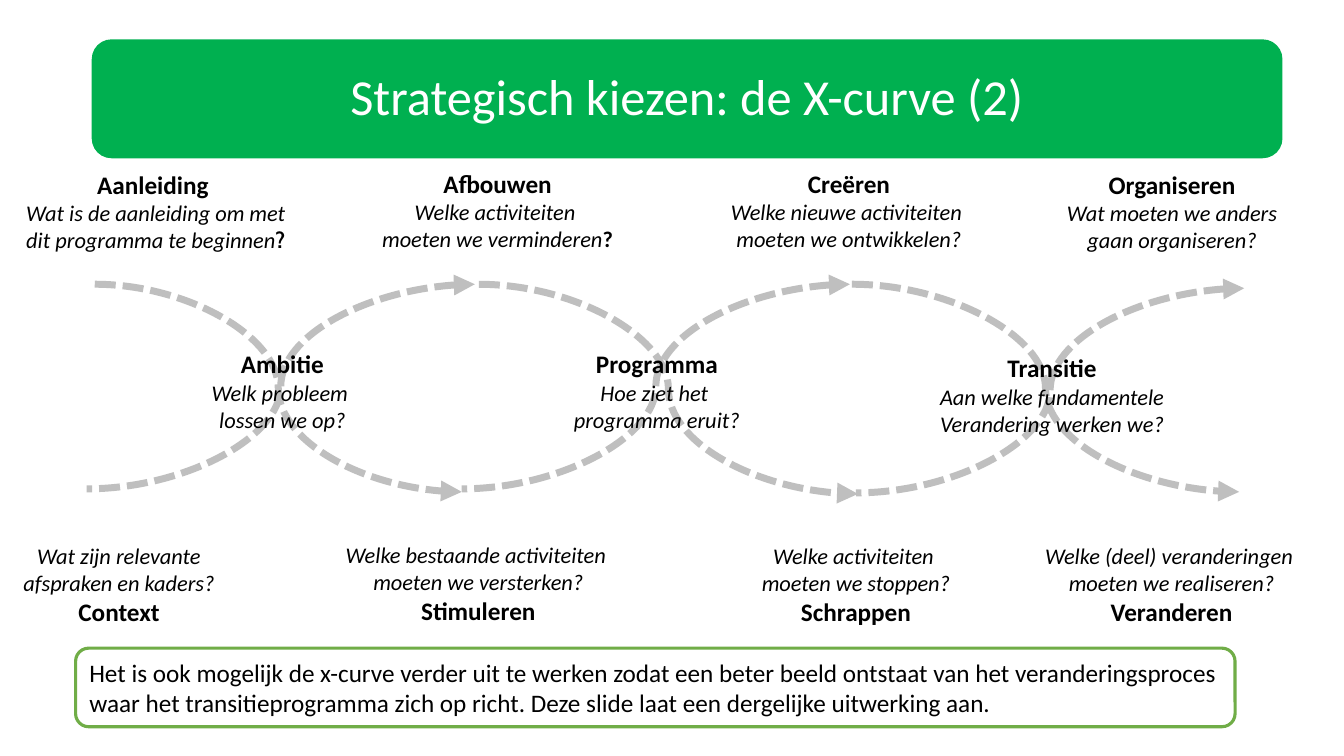
import pptx
import pptx.dml.color
import pptx.enum.dml
import pptx.enum.shapes
import pptx.enum.text
import pptx.oxml
import pptx.oxml.ns
import pptx.util

Inches = pptx.util.Inches
Pt = pptx.util.Pt
ALIGN = pptx.enum.text.PP_ALIGN
ANCHOR = pptx.enum.text.MSO_ANCHOR
FIT = pptx.enum.text.MSO_AUTO_SIZE

CURVES = [
    (12.34, 2.86, 8.49, 4.89),
    (4.71, 2.82, 0.86, 4.85),
    (0.94, 2.82, 4.58, 4.88),
    (4.75, 2.82, 8.51, 4.9),
    (8.43, 2.82, 4.58, 4.85),
    (8.45, 2.82, 12.29, 4.88),
]

HEADING_ABOVE = [
    (0.12, 1.63, 2.85, "Aanleiding ", "Wat is de aanleiding om met", "dit programma te beginnen", "Cabin"),
    (3.63, 1.62, 2.61, "Afbouwen", "Welke activiteiten ", "moeten we verminderen", "Calibri"),
    (7.09, 1.62, 2.66, "Creëren", "Welke nieuwe activiteiten ", "moeten we ontwikkelen?", None),
    (10.44, 1.63, 2.37, "Organiseren", "Wat moeten we anders", "gaan organiseren?", None),
    (1.99, 3.41, 1.62, "Ambitie", "Welk probleem ", "lossen we op?", None),
    (5.58, 3.41, 1.87, "Programma", "Hoe ziet het ", "programma eruit?", None),
    (9.22, 3.45, 2.43, "Transitie", "Aan welke fundamentele", "Verandering werken we?", None),
]

HEADING_BELOW = [
    (0.12, 5.33, 2.12, "Context", "Wat zijn relevante", "afspraken en kaders?"),
    (3.31, 5.32, 2.87, "Stimuleren", "Welke bestaande activiteiten ", "moeten we versterken?"),
    (7.44, 5.33, 2.1, "Schrappen", "Welke activiteiten ", "moeten we stoppen?"),
    (10.25, 5.33, 2.74, "Veranderen", "Welke (deel) veranderingen ", "moeten we realiseren?"),
]


def rgb(value):
    return pptx.dml.color.RGBColor.from_string(value)


def add_run(p, text, size=16, color="000000", bold=False, italic=False, font="Calibri"):
    r = p.add_run()
    r.text = text
    r.font.name = font
    r.font.size = Pt(size)
    r.font.bold = bold
    r.font.italic = italic
    r.font.color.rgb = rgb(color)


def add_curve(s, x1, y1, x2, y2):
    kind = pptx.enum.shapes.MSO_CONNECTOR.CURVE
    c = s.shapes.add_connector(kind, Inches(x1), Inches(y1), Inches(x2), Inches(y2))
    c.line.color.rgb = rgb("BFBFBF")
    c.line.width = Pt(5)
    c.line.dash_style = pptx.enum.dml.MSO_LINE.SQUARE_DOT
    arrow = "a:tailEnd" if x2 > x1 else "a:headEnd"
    end = pptx.oxml.parse_xml(f'<{arrow} {pptx.oxml.ns.nsdecls("a")} type="triangle"/>')
    c.line._get_or_add_ln().append(end)
    effects = pptx.oxml.parse_xml(f'<a:effectLst {pptx.oxml.ns.nsdecls("a")}/>')
    c._element.spPr.append(effects)


def add_question(s, x, y, w, heading, first, second, mark_font=None, below=False):
    tf = s.shapes.add_textbox(Inches(x), Inches(y), Inches(w), Inches(0.94)).text_frame
    tf.word_wrap = False
    tf.auto_size = FIT.SHAPE_TO_FIT_TEXT
    lines = [first, second, heading] if below else [heading, first, second]
    for i, text in enumerate(lines):
        p = tf.add_paragraph() if i else tf.paragraphs[0]
        p.alignment = ALIGN.CENTER
        if text == heading:
            add_run(p, text, size=18, bold=True)
        else:
            add_run(p, text, italic=True)
    if mark_font:
        add_run(p, "?", bold=True, font=mark_font)


def add_panel(s, x, y, w, h, fill=None, line=None):
    kind = pptx.enum.shapes.MSO_SHAPE.ROUNDED_RECTANGLE
    sp = s.shapes.add_shape(kind, Inches(x), Inches(y), Inches(w), Inches(h))
    sp.shadow.inherit = False
    if fill:
        sp.fill.solid()
        sp.fill.fore_color.rgb = rgb(fill)
    else:
        sp.fill.background()
    if line:
        sp.line.color.rgb = rgb(line)
        sp.line.width = Pt(2.25)
    else:
        sp.line.fill.background()
    sp.text_frame.word_wrap = True
    return sp.text_frame


def add_title(s, text):
    tf = add_panel(s, 0.91, 0.39, 11.81, 1.18, fill="00B050")
    tf.vertical_anchor = ANCHOR.MIDDLE
    p = tf.paragraphs[0]
    p.alignment = ALIGN.CENTER
    p.line_spacing = 0.9
    add_run(p, text, size=36, color="FFFFFF")


def add_note(s, text):
    tf = add_panel(s, 0.75, 6.43, 11.5, 0.78, line="70AD47")
    tf.vertical_anchor = ANCHOR.TOP
    tf.auto_size = FIT.SHAPE_TO_FIT_TEXT
    p = tf.paragraphs[0]
    p.alignment = ALIGN.LEFT
    add_run(p, text, size=18)


def main():
    prs = pptx.Presentation()
    prs.slide_width = Inches(13.33)
    prs.slide_height = Inches(7.5)
    s = prs.slides.add_slide(prs.slide_layouts[6])
    for curve in CURVES:
        add_curve(s, *curve)
    for question in HEADING_ABOVE:
        add_question(s, *question)
    for question in HEADING_BELOW:
        add_question(s, *question, below=True)
    add_title(s, "Strategisch kiezen: de X-curve (2)")
    add_note(s, "Het is ook mogelijk de x-curve verder uit te werken zodat een beter beeld ontstaat "
                "van het veranderingsproces waar het transitieprogramma zich op richt. "
                "Deze slide laat een dergelijke uitwerking aan.")
    prs.save("out.pptx")


if __name__ == "__main__":
    main()
